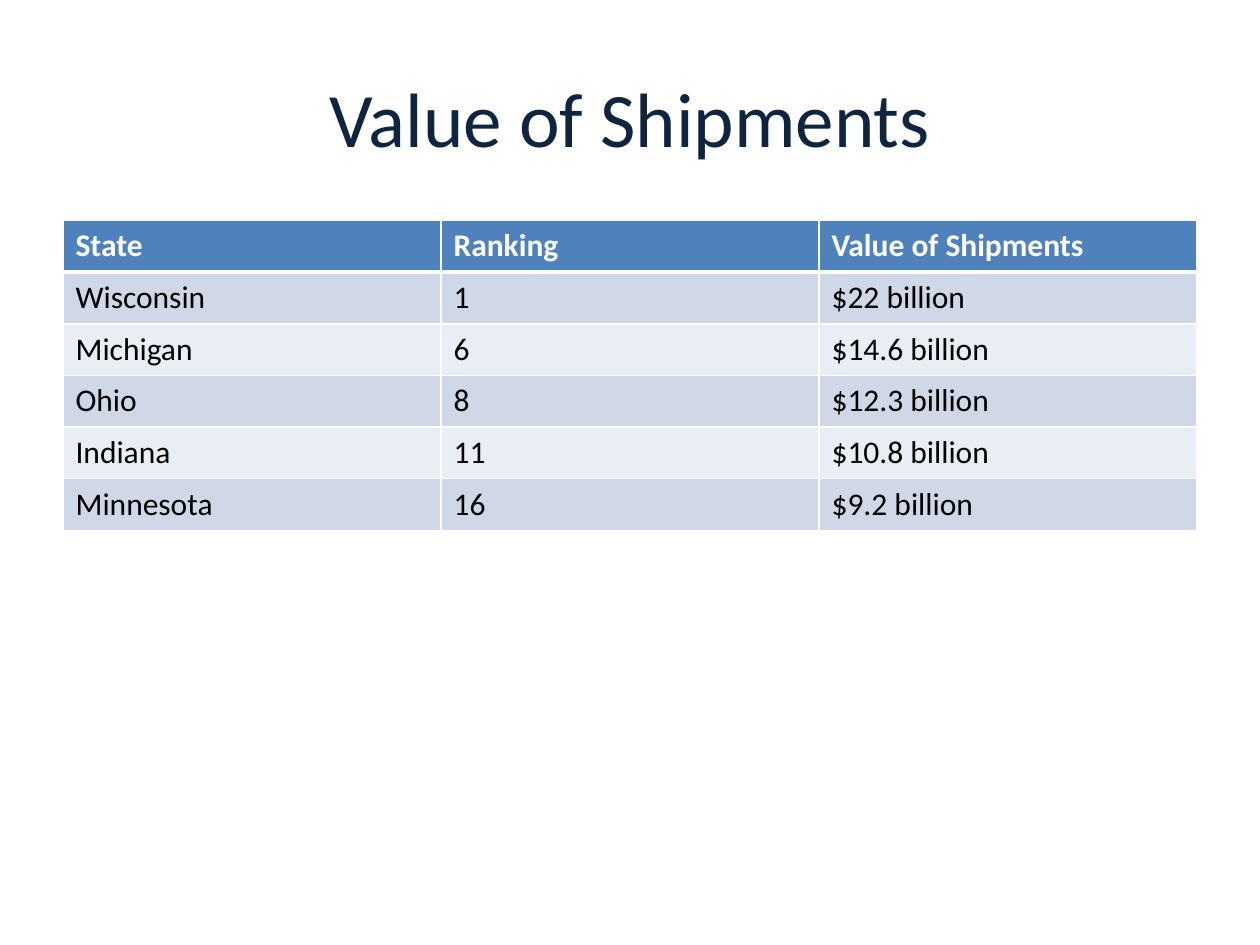
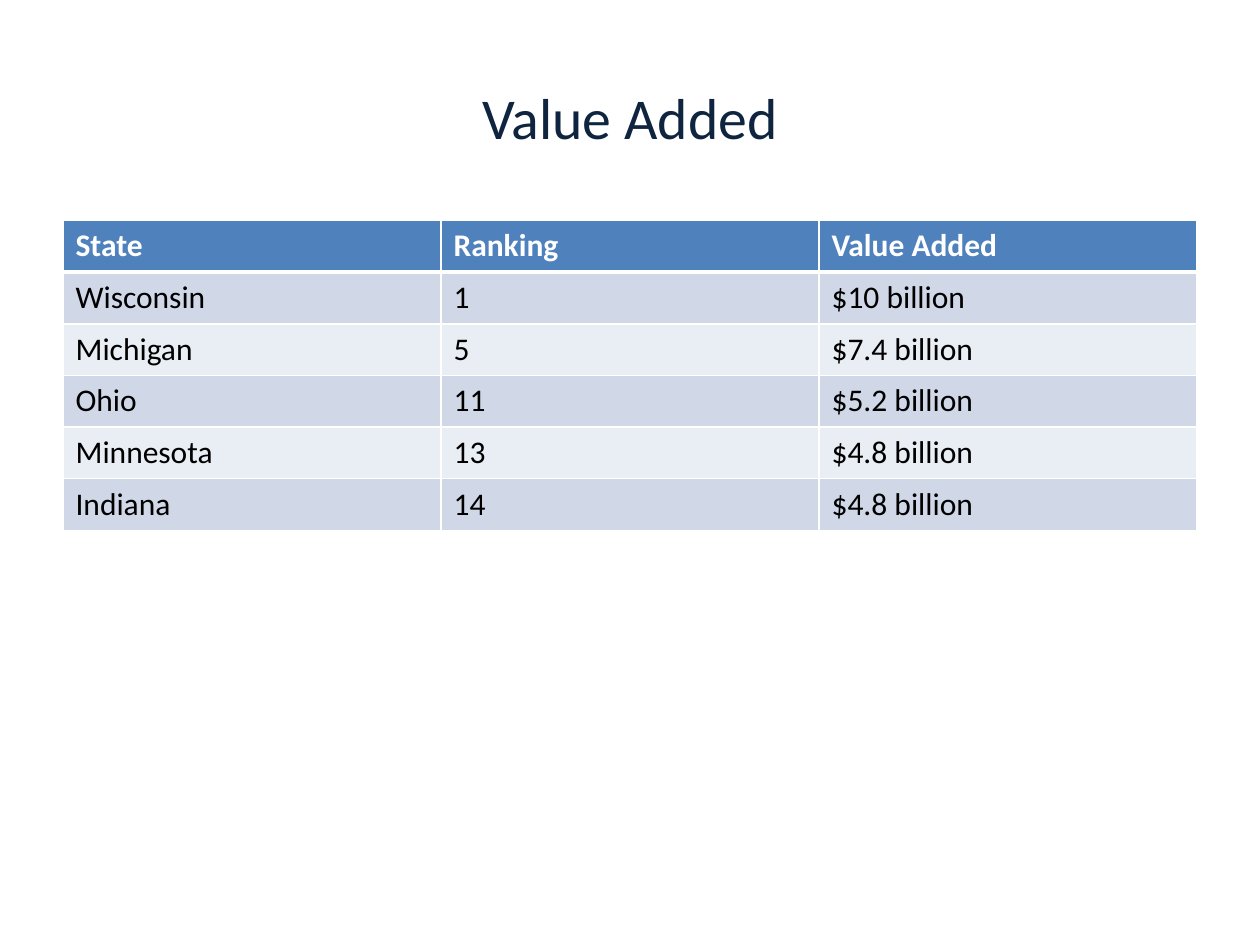
import pptx
import pptx.util
import pptx.dml.color
import pptx.enum.text
import pptx.oxml
import pptx.oxml.ns
import lxml.etree

WIDTH, HEIGHT = 10, 7.5
MARGIN = 0.05 * WIDTH
CONTENT_W = WIDTH - 2 * MARGIN
TITLE_TOP, TITLE_H = 0.04 * HEIGHT, HEIGHT / 6
TABLE_TOP, ROW_H = 1.75, 0.41
FONT = "Calibri"
COLORS = {
    "title": "0F243E",
    "header": "4F81BD",
    "odd_row": "D0D8E8",
    "even_row": "E9EDF4",
    "rule": "FFFFFF",
    "header_text": "FFFFFF",
    "body_text": "000000",
}

SLIDES = [
    ("Value of Shipments", 44, [
        ("Wisconsin", "1", "$22 billion"),
        ("Michigan", "6", "$14.6 billion"),
        ("Ohio", "8", "$12.3 billion"),
        ("Indiana", "11", "$10.8 billion"),
        ("Minnesota", "16", "$9.2 billion"),
    ]),
    ("Value Added", 33, [
        ("Wisconsin", "1", "$10 billion"),
        ("Michigan", "5", "$7.4 billion"),
        ("Ohio", "11", "$5.2 billion"),
        ("Minnesota", "13", "$4.8 billion"),
        ("Indiana", "14", "$4.8 billion"),
    ]),
]


def rgb(name):
    return pptx.dml.color.RGBColor.from_string(COLORS[name])


def add_run(p, text, size, color, bold=False):
    r = p.add_run()
    r.text = text
    r.font.name = FONT
    r.font.size = pptx.util.Pt(size)
    r.font.bold = bold
    r.font.color.rgb = rgb(color)


def add_title(s, text, size):
    box = (MARGIN, TITLE_TOP, CONTENT_W, TITLE_H)
    tf = s.shapes.add_textbox(*map(pptx.util.Inches, box)).text_frame
    tf.word_wrap = True
    tf.vertical_anchor = pptx.enum.text.MSO_ANCHOR.MIDDLE
    p = tf.paragraphs[0]
    p.alignment = pptx.enum.text.PP_ALIGN.CENTER
    add_run(p, text, size, "title")


def set_borders(cell, **widths):
    tc_pr = cell._tc.get_or_add_tcPr()
    for side, width in widths.items():
        ln = lxml.etree.SubElement(tc_pr, pptx.oxml.ns.qn(f"a:ln{side}"),
                                   w=str(pptx.util.Pt(width)))
        fill = lxml.etree.SubElement(ln, pptx.oxml.ns.qn("a:solidFill"))
        lxml.etree.SubElement(fill, pptx.oxml.ns.qn("a:srgbClr"), val=COLORS["rule"])


def style_cell(cell, row, text):
    header = row == 0
    set_borders(cell, L=1, R=1, T=3 if row == 1 else 1, B=3 if header else 1)
    cell.fill.solid()
    band = "odd_row" if row % 2 else "even_row"
    cell.fill.fore_color.rgb = rgb("header" if header else band)
    color = "header_text" if header else "body_text"
    add_run(cell.text_frame.paragraphs[0], text, 18, color, header)


def add_ranking_table(s, rows):
    box = (MARGIN, TABLE_TOP, CONTENT_W, ROW_H * len(rows))
    table = s.shapes.add_table(len(rows), len(rows[0]),
                               *map(pptx.util.Inches, box)).table
    for i, values in enumerate(rows):
        for j, text in enumerate(values):
            style_cell(table.cell(i, j), i, text)


def main():
    prs = pptx.Presentation()
    prs.slide_width = pptx.util.Inches(WIDTH)
    prs.slide_height = pptx.util.Inches(HEIGHT)
    for title, size, states in SLIDES:
        s = prs.slides.add_slide(prs.slide_layouts[6])
        add_title(s, title, size)
        add_ranking_table(s, [("State", "Ranking", title)] + states)
    prs.save("out.pptx")


if __name__ == "__main__":
    main()
